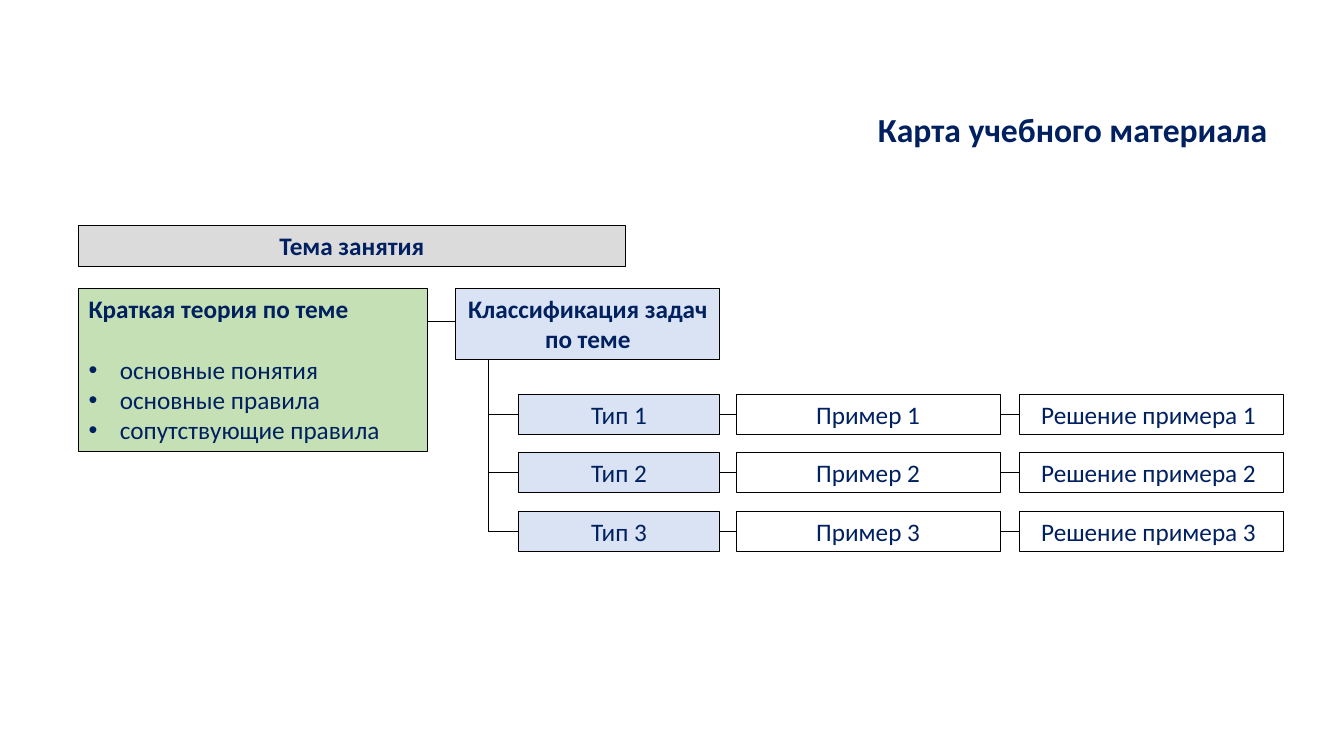
from lxml import etree
from pptx import Presentation
from pptx import util as u
from pptx.dml.color import RGBColor
from pptx.enum import shapes, text
from pptx.oxml.ns import qn

TITLE = "Карта учебного материала"
TOPIC = "Тема занятия"
THEORY = "Краткая теория по теме"
THEORY_POINTS = ["основные понятия", "основные правила", "сопутствующие правила"]
TASKS = "Классификация задач по теме"
ROWS = [
    ("Тип 1", "Пример 1", "Решение примера 1 "),
    ("Тип 2", "Пример 2", "Решение примера 2 "),
    ("Тип 3", "Пример 3", "Решение примера 3 "),
]

THEME = {
    "font": "Calibri", "ink": "002060", "line": "000000",
    "topic": "DBDBDB", "theory": "C5E0B4", "tasks": "DAE3F3",
    "title_size": 24, "body_size": 18, "gap": 22,
    "border": 0.75, "connector": 0.5,
}
COLUMNS = [(5.14, 2.0, THEME["tasks"]), (7.3, 2.62, None), (10.11, 2.62, None)]
ROW_TOP, ROW_PITCH, ROW_HEIGHT = 3.91, 0.58, 0.4
TRUNK = 4.84
TASKS_AT = (4.52, 2.86, 2.62, 0.71)
THEORY_AT = (0.78, 2.86, 3.46, 1.62)
LINK_Y = 3.19
LEFT, CENTER = text.PP_ALIGN.LEFT, text.PP_ALIGN.CENTER


def write(para, words, **extra):
    span = para.add_run()
    span.text = words
    formats = {"name": THEME["font"], "size": u.Pt(THEME["body_size"]), "bold": False}
    for name, value in (formats | extra).items():
        setattr(span.font, name, value)
    span.font.color.rgb = RGBColor.from_string(THEME["ink"])


def set_frame(box, align):
    frame = box.text_frame
    frame.word_wrap = True
    frame.vertical_anchor = text.MSO_ANCHOR.TOP
    frame.paragraphs[0].alignment = align
    return frame


def add_box(page, at, fill, words, align=CENTER, bold=False):
    box = page.shapes.add_shape(shapes.MSO_SHAPE.RECTANGLE, *map(u.Inches, at))
    box.shadow.inherit = False
    if fill:
        box.fill.solid()
        box.fill.fore_color.rgb = RGBColor.from_string(fill)
    else:
        box.fill.background()
    box.line.color.rgb = RGBColor.from_string(THEME["line"])
    box.line.width = u.Pt(THEME["border"])
    frame = set_frame(box, align)
    write(frame.paragraphs[0], words, bold=bold)
    return frame


def add_bullet(frame, words, space):
    para = frame.add_paragraph()
    para.alignment = LEFT
    para.space_before = u.Pt(space)
    properties = para._p.get_or_add_pPr()
    indent = u.Inches(0.31)
    properties.set("marL", str(indent))
    properties.set("indent", str(-indent))
    etree.SubElement(properties, qn("a:buFont")).set("typeface", "Arial")
    etree.SubElement(properties, qn("a:buChar")).set("char", "•")
    write(para, words)


def add_line(page, *ends):
    line = page.shapes.add_connector(shapes.MSO_CONNECTOR.STRAIGHT, *map(u.Inches, ends))
    line.line.color.rgb = RGBColor.from_string(THEME["line"])
    line.line.width = u.Pt(THEME["connector"])
    etree.SubElement(line._element.spPr, qn("a:effectLst"))


def main():
    deck = Presentation()
    deck.slide_width, deck.slide_height = u.Inches(13.33), u.Inches(7.5)
    page = deck.slides.add_slide(deck.slide_layouts[6])

    title = page.shapes.add_textbox(*map(u.Inches, (8.61, 1.03, 4.24, 0.5)))
    write(set_frame(title, LEFT).paragraphs[0], TITLE,
          size=u.Pt(THEME["title_size"]), bold=True)

    add_box(page, (0.78, 2.24, 5.42, 0.4), THEME["topic"], TOPIC, bold=True)
    theory = add_box(page, THEORY_AT, THEME["theory"], THEORY, LEFT, True)
    for index, point in enumerate(THEORY_POINTS):
        add_bullet(theory, point, 0 if index else THEME["gap"])
    add_box(page, TASKS_AT, THEME["tasks"], TASKS, bold=True)
    add_line(page, THEORY_AT[0] + THEORY_AT[2], LINK_Y, TASKS_AT[0], LINK_Y)

    for row, cells in enumerate(ROWS):
        top = ROW_TOP + row * ROW_PITCH
        middle = top + ROW_HEIGHT / 2
        start = TRUNK
        for (left, width, fill), words in zip(COLUMNS, cells):
            add_line(page, start, middle, left, middle)
            add_box(page, (left, top, width, ROW_HEIGHT), fill, words)
            start = left + width
    add_line(page, TRUNK, TASKS_AT[1] + TASKS_AT[3], TRUNK, middle)

    deck.save("out.pptx")


if __name__ == "__main__":
    main()
